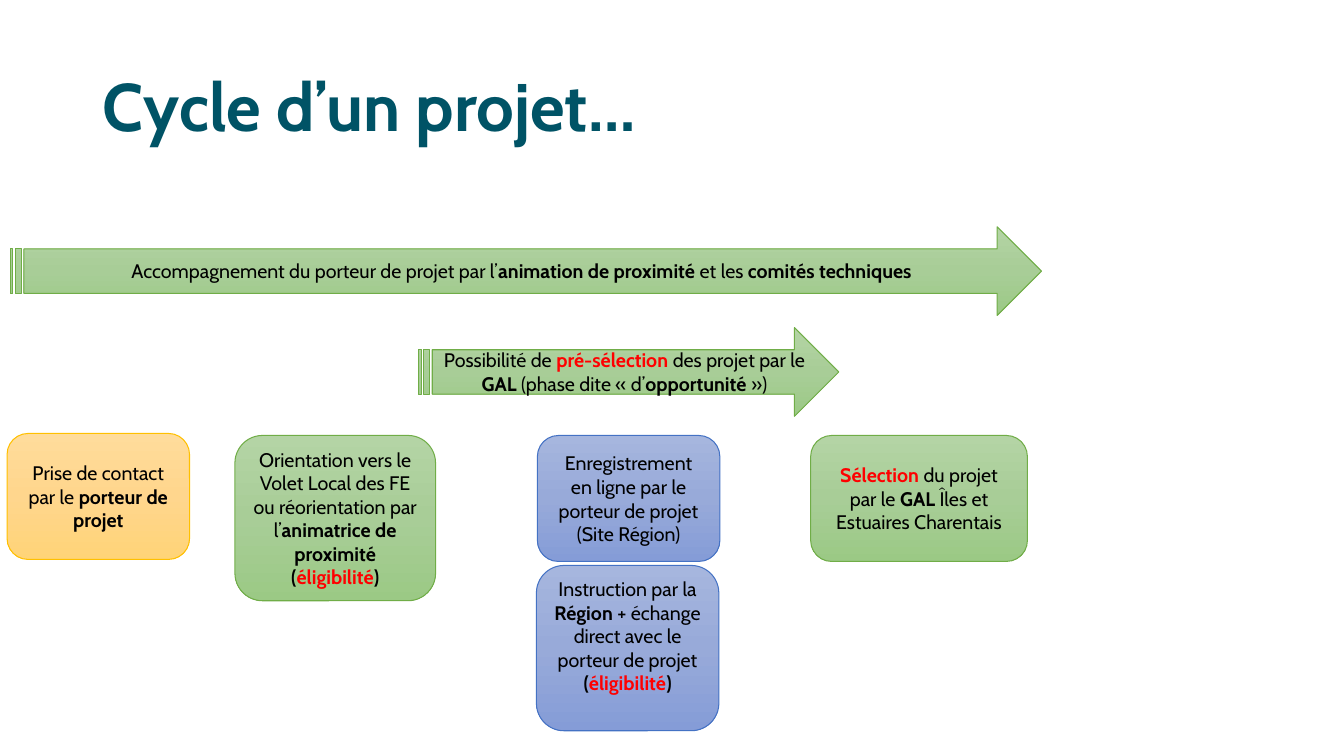
from copy import deepcopy
from dataclasses import dataclass

from pptx import Presentation
from pptx import util as u
from pptx.dml.color import RGBColor
from pptx.enum import shapes, text
from pptx.oxml.ns import qn

PX = 9144  # EMU per px, 100 px to the inch


@dataclass(frozen=True)
class Theme:
    font: str = "Cabin"
    title_size: int = 48
    body_size: int = 14
    title: str = "005366"
    ink: str = "000000"
    accent: str = "FF0000"
    # Each palette: gradient top, middle, bottom, then outline
    yellow: tuple = ("FFDC9B", "FFD68D", "FFD478", "FFC000")
    blue: tuple = ("A6B6DE", "98AAD9", "859CD7", "4472C4")
    green: tuple = ("B4D4A5", "A8CD97", "9BC985", "70AD47")


T = Theme()


def px(*values):
    return [u.Emu(v * PX) for v in values]


def add_run(p, content, size=T.body_size, color=T.ink, bold=False):
    r = p.add_run()
    r.text = content
    r.font.name = T.font
    r.font.size = u.Pt(size)
    r.font.bold = bold
    r.font.color.rgb = RGBColor.from_string(color)


def strong(content):
    return content, {"bold": True}


def key(content):
    return content, {"bold": True, "color": T.accent}


def write(tf, paragraphs, bottom=5):
    """Fill a frame; each paragraph lists plain strings or (text, format) pairs."""
    tf.word_wrap = True
    tf.vertical_anchor = text.MSO_ANCHOR.MIDDLE
    tf.margin_left, tf.margin_right, tf.margin_top, tf.margin_bottom = px(10, 10, 5, bottom)
    for i, parts in enumerate(paragraphs):
        p = tf.add_paragraph() if i else tf.paragraphs[0]
        p.alignment = text.PP_ALIGN.CENTER
        for part in parts:
            content, fmt = (part, {}) if isinstance(part, str) else part
            add_run(p, content, **fmt)


def paint(sp, palette):
    """Apply a vertical three-stop gradient and a thin outline."""
    top, middle, bottom, outline = palette
    sp.shadow.inherit = False
    sp.fill.gradient()
    sp.fill.gradient_angle = 270
    stops = sp._element.spPr.find(".//" + qn("a:gsLst"))
    stops.insert(1, deepcopy(stops[0]))
    for stop, color, position in zip(sp.fill.gradient_stops, (top, middle, bottom), (0, 0.5, 1)):
        stop.color.rgb = RGBColor.from_string(color)
        stop.position = position
    sp.line.color.rgb = RGBColor.from_string(outline)
    sp.line.width = u.Pt(0.75)


def add_step(s, box, palette, *paragraphs, bottom=5):
    sp = s.shapes.add_shape(shapes.MSO_SHAPE.ROUNDED_RECTANGLE, *px(*box))
    paint(sp, palette)
    write(sp.text_frame, paragraphs, bottom)


def add_phase(s, box, *paragraphs):
    sp = s.shapes.add_shape(shapes.MSO_SHAPE.STRIPED_RIGHT_ARROW, *px(*box))
    paint(sp, T.green)
    write(sp.text_frame, paragraphs)


def add_title(s, content):
    title = s.shapes.title
    title.left, title.top, title.width, title.height = px(92, 36, 1150, 145)
    tf = title.text_frame
    tf.vertical_anchor = text.MSO_ANCHOR.MIDDLE
    p = tf.paragraphs[0]
    p.alignment = text.PP_ALIGN.LEFT
    p.line_spacing = 0.9
    add_run(p, content, size=T.title_size, color=T.title, bold=True)


def main():
    prs = Presentation()
    prs.slide_width, prs.slide_height = px(1333, 750)
    s = prs.slides.add_slide(prs.slide_layouts[5])
    add_title(s, "Cycle d’un projet…")

    eligibility = [strong("("), key("éligibilité"), strong(")")]

    add_step(s, (7, 430, 181, 125), T.yellow,
             ["Prise de contact par le ", strong("porteur de projet")])
    add_step(s, (533, 432, 181, 125), T.blue,
             ["Enregistrement en ligne par le porteur de projet (Site Région)"])
    add_step(s, (532, 561, 181, 164), T.blue,
             ["Instruction par la ", strong("Région "),
              "+ échange direct avec le porteur de projet"],
             eligibility, bottom=29)
    add_step(s, (804, 432, 215, 125), T.green,
             [key("Sélection"), " du projet par le ", strong("GAL"),
              " Îles et Estuaires Charentais"])
    add_phase(s, (415, 325, 417, 88),
              ["Possibilité de ", key("pré-sélection"), " des projet par le ",
               strong("GAL"), " (phase dite « d’", strong("opportunité"), " »)"])
    add_step(s, (233, 432, 199, 164), T.green,
             ["Orientation vers le Volet Local des FE ou réorientation par l’",
              strong("animatrice de proximité")],
             eligibility)
    add_phase(s, (10, 225, 1023, 88),
              ["Accompagnement du porteur de projet par l’",
               strong("animation de proximité "), "et les ",
               strong("comités techniques")])

    prs.save("out.pptx")


if __name__ == "__main__":
    main()
